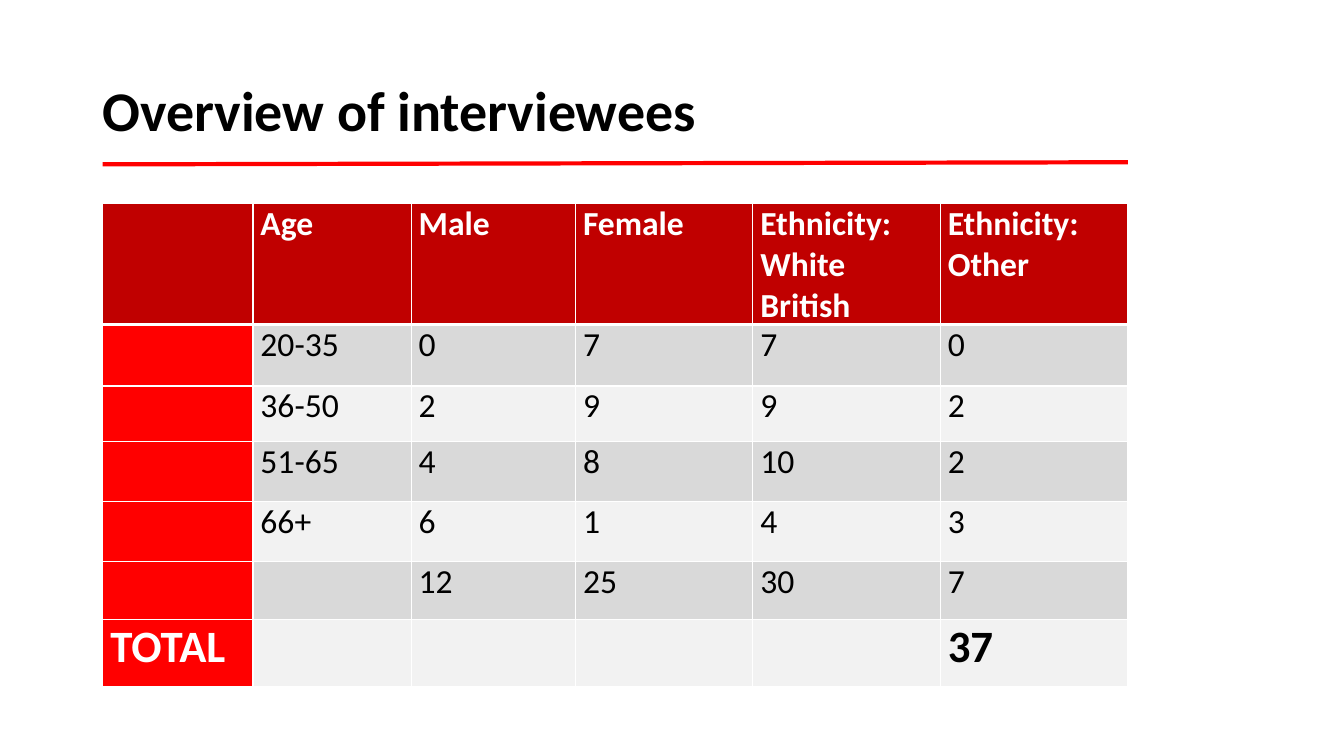
from lxml import etree
from pptx import Presentation
from pptx.dml.color import RGBColor
from pptx.enum.shapes import MSO_CONNECTOR
from pptx.enum.text import MSO_ANCHOR
from pptx.oxml.ns import qn
from pptx.util import Pt

STRAIGHT = MSO_CONNECTOR.STRAIGHT
MIDDLE = MSO_ANCHOR.MIDDLE

BLACK = RGBColor(0x00, 0x00, 0x00)
WHITE = RGBColor(0xFF, 0xFF, 0xFF)
RED = RGBColor(0xFF, 0x00, 0x00)
DARK_RED = RGBColor(0xC0, 0x00, 0x00)
GREY = RGBColor(0xD9, 0xD9, 0xD9)
LIGHT_GREY = RGBColor(0xF2, 0xF2, 0xF2)

LEFT = 73.4
COLUMN_WIDTHS = [107.3, 113, 117.4, 126.7, 133.9, 133.9]
ROW_HEIGHTS = [86, 43.9, 39.6, 43.2, 42.5, 41.8, 47.5]
TABLE_WIDTH = sum(COLUMN_WIDTHS)

INTERVIEWEES = [
    ["", "Age", "Male", "Female", "Ethnicity: White British", "Ethnicity: Other"],
    ["", "20-35", "0", "7", "7", "0"],
    ["", "36-50", "2", "9", "9", "2"],
    ["", "51-65", "4", "8", "10", "2"],
    ["", "66+", "6", "1", "4", "3"],
    ["", "", "12", "25", "30", "7"],
    ["TOTAL", "", "", "", "", "37"],
]
LAST_ROW = len(INTERVIEWEES) - 1


def write_text(text_frame, text, size=24, color=BLACK, bold=False):
    paragraph = text_frame.paragraphs[0]
    run = paragraph.add_run()
    run.text = text
    run.font.name = "Calibri"
    run.font.size = Pt(size)
    run.font.bold = bold
    run.font.color.rgb = color
    return paragraph


def set_borders(cell, widths):
    properties = cell._tc.get_or_add_tcPr()
    for position, (side, width) in enumerate(widths.items()):
        line = etree.Element(qn("a:" + side), w=str(Pt(width)))
        fill = etree.SubElement(line, qn("a:solidFill"))
        etree.SubElement(fill, qn("a:srgbClr"), val=str(WHITE))
        properties.insert(position, line)


presentation = Presentation()
presentation.slide_width = Pt(960)
presentation.slide_height = Pt(540)
slide = presentation.slides.add_slide(presentation.slide_layouts[6])

# Title
title = slide.shapes.add_textbox(Pt(66.2), Pt(28.8), Pt(828), Pt(104.4))
title.text_frame.word_wrap = True
title.text_frame.vertical_anchor = MIDDLE
heading = write_text(title.text_frame, "Overview of interviewees", size=40, bold=True)
heading.line_spacing = 0.9

# Rule under the title
rule = slide.shapes.add_connector(
    STRAIGHT, Pt(LEFT), Pt(117.4), Pt(LEFT + TABLE_WIDTH), Pt(115.9))
rule.line.color.rgb = RED
rule.line.width = Pt(3)
etree.SubElement(rule._element.spPr, qn("a:effectLst"))

# Table of interviewees
table = slide.shapes.add_table(
    len(ROW_HEIGHTS), len(COLUMN_WIDTHS), Pt(LEFT), Pt(145.4),
    Pt(TABLE_WIDTH), Pt(sum(ROW_HEIGHTS))).table
for column, width in zip(table.columns, COLUMN_WIDTHS):
    column.width = Pt(width)
for row, height in zip(table.rows, ROW_HEIGHTS):
    row.height = Pt(height)

for row_index, values in enumerate(INTERVIEWEES):
    is_header = row_index == 0
    is_total = row_index == LAST_ROW
    for column_index, value in enumerate(values):
        cell = table.cell(row_index, column_index)
        cell.margin_left = cell.margin_right = Pt(5.4)
        cell.margin_top = cell.margin_bottom = Pt(0)

        if is_header:
            background = DARK_RED
        elif column_index == 0:
            background = RED
        else:
            background = GREY if row_index % 2 else LIGHT_GREY
        cell.fill.solid()
        cell.fill.fore_color.rgb = background

        # A thicker line parts the header from the body
        set_borders(cell, {"lnL": 1, "lnR": 1,
                           "lnT": 3 if row_index == 1 else 1,
                           "lnB": 3 if is_header else 1})
        if value:
            write_text(cell.text_frame, value,
                       size=32 if is_total else 24,
                       color=WHITE if is_header or column_index == 0 else BLACK,
                       bold=is_header or is_total)

presentation.save("out.pptx")
